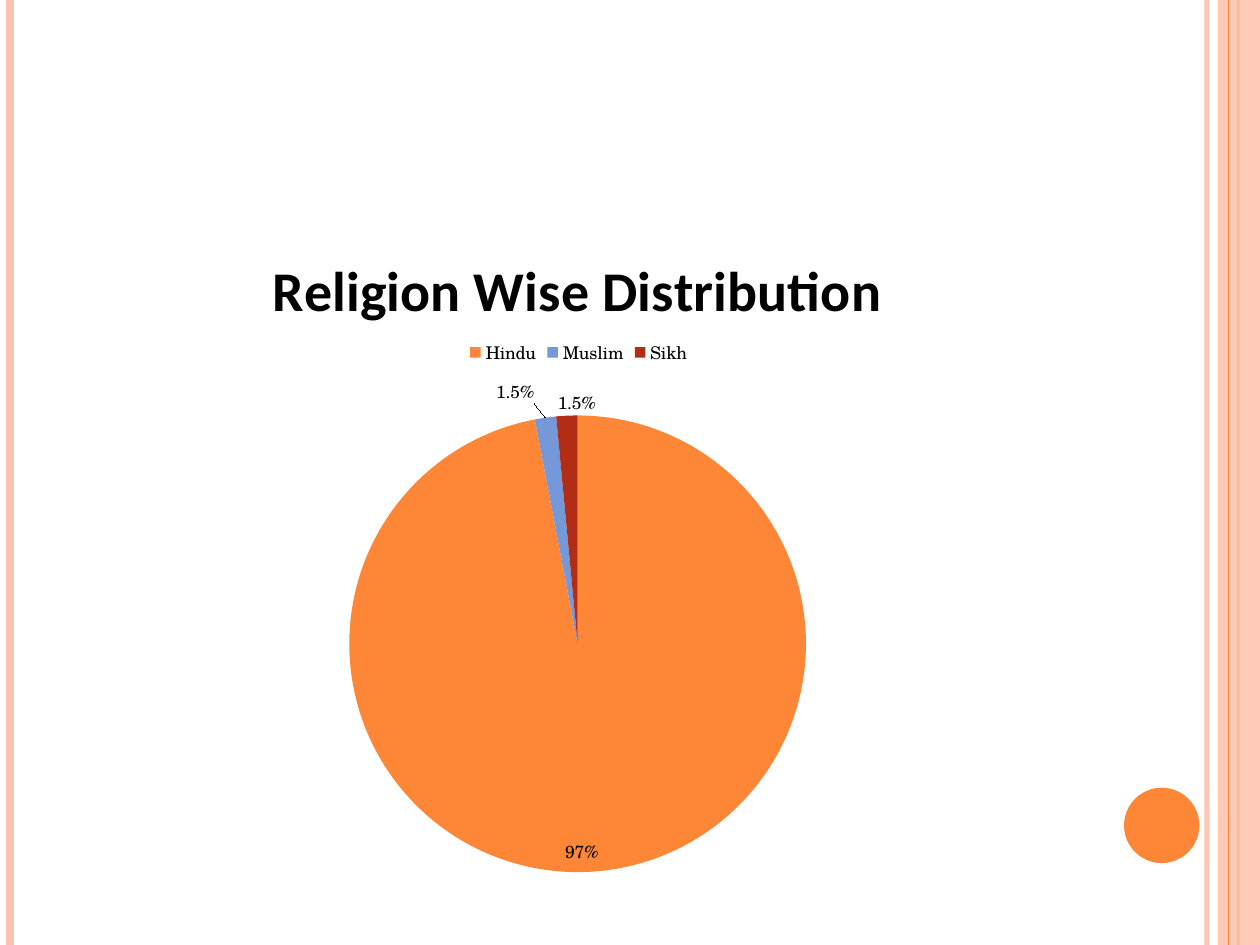
import pptx
import pptx.chart.data
import pptx.dml.color
import pptx.enum.chart
import pptx.enum.shapes
import pptx.oxml
import pptx.oxml.ns
import pptx.util
from pptx.util import Cm

ORANGE, PEACH, BLACK = "FE8637", "FEC3AE", "000000"


def paint(color_format, hex_color, opacity=100):
    """Set a solid colour on a fill, line or font; opacity is in percent."""
    color_format.solid()
    color_format.fore_color.rgb = pptx.dml.color.RGBColor.from_string(hex_color)
    if opacity < 100:
        color = color_format._xPr.find(".//" + pptx.oxml.ns.qn("a:srgbClr"))
        alpha = color.makeelement(pptx.oxml.ns.qn("a:alpha"), {"val": str(opacity * 1000)})
        color.append(alpha)


def place(chart_part, index, **values):
    """Give a chart part a manual layout, as its child number index."""
    for old_layout in chart_part.findall(pptx.oxml.ns.qn("c:layout")):
        chart_part.remove(old_layout)
    settings = "".join(f'<c:{key} val="{value}"/>' for key, value in values.items())
    chart_part.insert(index, pptx.oxml.parse_xml(
        f'<c:layout {pptx.oxml.ns.nsdecls("c")}>'
        f"<c:manualLayout>{settings}</c:manualLayout></c:layout>"
    ))


deck = pptx.Presentation()
deck.slide_width, deck.slide_height = Cm(25.4), Cm(19.05)
slide = deck.slides.add_slide(deck.slide_layouts[6])

# Side stripes, band and dot: x in cm, width in points
stripes = [
    (24.33, PEACH, 3, 93),
    (0.21, PEACH, 4.5, 100),
    (24.97, ORANGE, 1.5, 100),
    (24.77, ORANGE, 0.75, 100),
]
band_after = 2
for position, (x, color, weight, opacity) in enumerate(stripes):
    stripe = slide.shapes.add_connector(
        pptx.enum.shapes.MSO_CONNECTOR.STRAIGHT, Cm(x), 0, Cm(x), deck.slide_height
    )
    stripe.line.width = pptx.util.Pt(weight)
    paint(stripe.line.fill, color, opacity)
    stripe._element.spPr.append(
        stripe._element.makeelement(pptx.oxml.ns.qn("a:effectLst"), {})
    )
    if position == band_after:
        band = slide.shapes.add_shape(
            pptx.enum.shapes.MSO_SHAPE.RECTANGLE, Cm(24.55), 0, Cm(0.85), deck.slide_height
        )
dot = slide.shapes.add_shape(
    pptx.enum.shapes.MSO_SHAPE.OVAL, Cm(22.66), Cm(15.88), Cm(1.52), Cm(1.52)
)
for ornament, color, opacity in [(band, PEACH, 87), (dot, ORANGE, 100)]:
    ornament.shadow.inherit = False
    ornament.line.fill.background()
    paint(ornament.fill, color, opacity)

# Religion pie
religions = pptx.chart.data.CategoryChartData()
religions.categories = ["Hindu", "Muslim", "Sikh"]
religions.add_series("Series 1", [97, 1.5, 1.5])
pie = slide.shapes.add_chart(
    pptx.enum.chart.XL_CHART_TYPE.PIE, Cm(1.27), Cm(4.45), Cm(20.75), Cm(13.54), religions
).chart
pie.font.name = "TeX Gyre Schola"
pie.font.size = pptx.util.Pt(10)
paint(pie.font.fill, BLACK)

pie.has_title = True
pie.chart_title.text_frame.text = "Religion Wise Distribution"
heading = pie.chart_title.text_frame.paragraphs[0].runs[0].font
for name, value in {"name": "Calibri", "size": pptx.util.Pt(32), "bold": True}.items():
    setattr(heading, name, value)
paint(heading.fill, BLACK)

pie.has_legend = True
legend_format = {
    "position": pptx.enum.chart.XL_LEGEND_POSITION.TOP,
    "include_in_layout": False,
}
for name, value in legend_format.items():
    setattr(pie.legend, name, value)
place(pie.legend._element, 1, xMode="edge", yMode="edge", x=0.39, y=0.17)

plot = pie.plots[0]
plot.vary_by_categories = True
shares = plot.series[0]
for index, color in enumerate([ORANGE, "7598D9", "B32C16"]):
    paint(shares.points[index].format.fill, color)

label_format = {
    "show_percentage": True,
    "show_value": False,
    "number_format": "0%",
    "number_format_is_linked": False,
    "position": pptx.enum.chart.XL_LABEL_POSITION.INSIDE_END,
}
for name, value in label_format.items():
    setattr(shares.data_labels, name, value)

# The two small slices have labels moved clear of each other
for index, shift_x, shift_y in [(1, -0.01, -0.01), (2, 0.01, 0.01)]:
    share_label = shares.points[index].data_label
    share_label.text_frame.text = "1.5%"
    share_label.position = pptx.enum.chart.XL_LABEL_POSITION.OUTSIDE_END
    place(share_label._dLbl, 1, x=shift_x, y=shift_y)

place(
    pie._chartSpace.chart.plotArea, 0,
    layoutTarget="inner", xMode="edge", yMode="edge", x=0.27, y=0.29, w=0.46, h=0.68,
)

deck.save("out.pptx")
